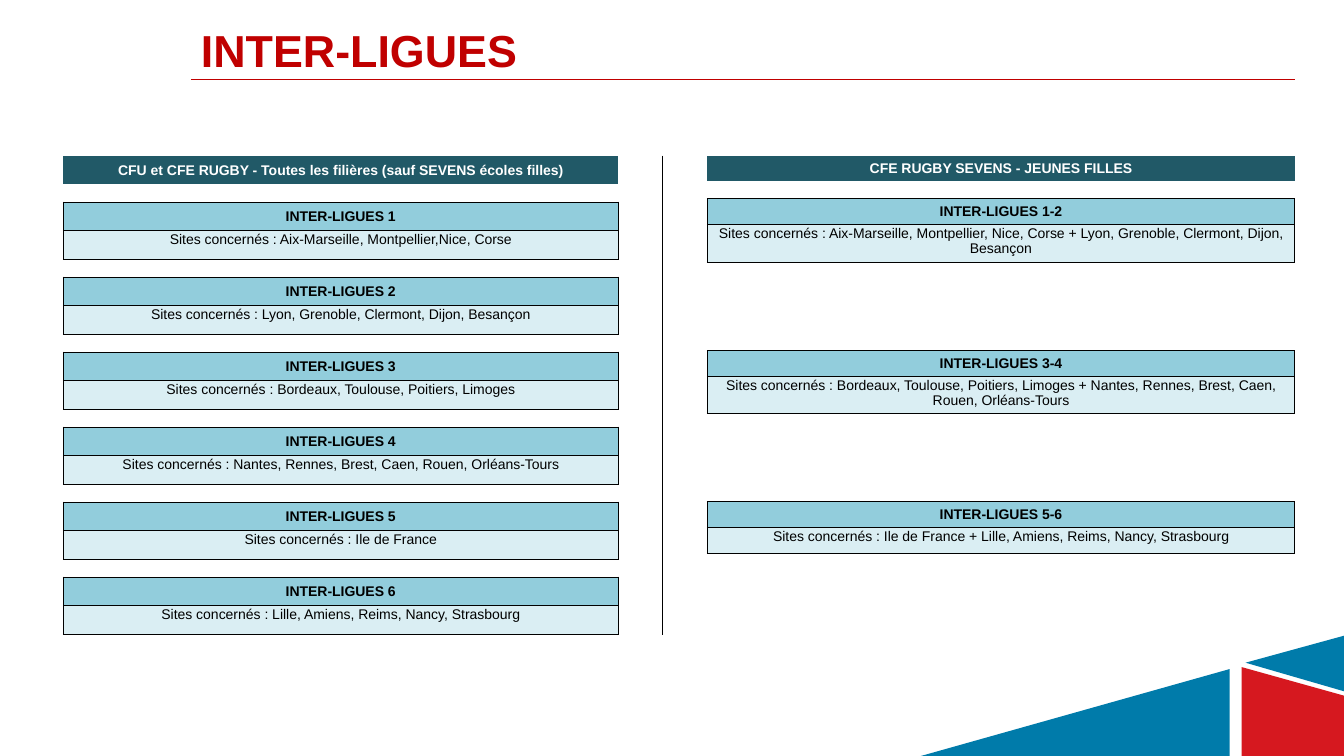
from lxml import etree
from pptx import Presentation
from pptx.dml.color import RGBColor
from pptx.enum.shapes import MSO_CONNECTOR
from pptx.enum.text import MSO_ANCHOR, MSO_AUTO_SIZE, PP_ALIGN
from pptx.oxml.ns import qn
from pptx.util import Cm, Pt

STRAIGHT = MSO_CONNECTOR.STRAIGHT
MIDDLE, TOP = MSO_ANCHOR.MIDDLE, MSO_ANCHOR.TOP
CENTER, LEFT = PP_ALIGN.CENTER, PP_ALIGN.LEFT
NO_FIT = MSO_AUTO_SIZE.NONE

FONT = "Arial"
PLAIN_STYLE = "{2D5ABB26-0587-4C30-8999-92F81FD0307C}"
COLS = 3
COLORS = {
    "title": "C00000", "black": "000000", "white": "FFFFFF",
    "dark": "215967", "mid": "92CDDC", "pale": "DAEEF3",
    "blue": "007BAA", "red": "D6181F",
}

ALL_SITES = [
    ("INTER-LIGUES 1", "Aix-Marseille, Montpellier,Nice, Corse", 0.72),
    ("INTER-LIGUES 2", "Lyon, Grenoble, Clermont, Dijon, Besançon", 0.72),
    ("INTER-LIGUES 3", "Bordeaux, Toulouse, Poitiers, Limoges", 0.72),
    ("INTER-LIGUES 4", "Nantes, Rennes, Brest, Caen, Rouen, Orléans-Tours", 0.72),
    ("INTER-LIGUES 5", "Ile de France", 0.72),
    ("INTER-LIGUES 6", "Lille, Amiens, Reims, Nancy, Strasbourg", 0.72),
]
GIRL_SITES = [
    ("INTER-LIGUES 1-2", "Aix-Marseille, Montpellier, Nice, Corse + Lyon, "
     "Grenoble, Clermont, Dijon, Besançon", 0.96),
    ("INTER-LIGUES 3-4", "Bordeaux, Toulouse, Poitiers, Limoges + Nantes, "
     "Rennes, Brest, Caen, Rouen, Orléans-Tours", 0.94),
    ("INTER-LIGUES 5-6", "Ile de France + Lille, Amiens, Reims, Nancy, "
     "Strasbourg", 0.66),
]


def rgb(name):
    return RGBColor.from_string(COLORS[name])


def add_run(para, text, size, color, bold):
    run = para.add_run()
    run.text = text
    font = run.font
    font.name, font.size, font.bold = FONT, Pt(size), bold
    font.color.rgb = rgb(color)


def add_line(slide, ends, color):
    line = slide.shapes.add_connector(STRAIGHT, *(Cm(v) for v in ends))
    line.line.color.rgb = rgb(color)
    line.line.width = Pt(0.5)
    etree.SubElement(line._element.spPr, qn("a:effectLst"))


def add_title(slide, box, text):
    left, top, width, height = box
    title = slide.shapes.title
    title.left, title.top = Cm(left), Cm(top)
    title.width, title.height = Cm(width), Cm(height)
    frame = title.text_frame
    frame.auto_size, frame.vertical_anchor = NO_FIT, MIDDLE
    para = frame.paragraphs[0]
    para.alignment, para.line_spacing = LEFT, 0.9
    add_run(para, text, 32, "title", True)
    rule = top + 1.61
    add_line(slide, (left, rule, left + width, rule), "title")


def add_corner(slide, box):
    """Place the three coloured panels of the bottom right corner."""
    left, top, width, height = box
    panels = [
        ("blue", [(0, height), (7.78, 0.84), (7.78, height)]),
        ("blue", [(width, 0), (8.18, 0.68), (width, 1.4)]),
        ("red", [(8.08, height), (width, height), (width, 1.51), (8.08, 0.79)]),
    ]
    for color, points in panels:
        start, *rest = [(Cm(left + x), Cm(top + y)) for x, y in points]
        path = slide.shapes.build_freeform(*start)
        path.add_line_segments(rest, close=True)
        panel = path.convert_to_shape()
        panel.shadow.inherit = False
        panel.fill.solid()
        panel.fill.fore_color.rgb = rgb(color)
        panel.line.fill.background()


def add_edges(cell, sides):
    props = cell._tc.get_or_add_tcPr()
    for side in sides:
        edge = etree.SubElement(props, qn("a:ln" + side), w=str(Pt(0.5)))
        fill = etree.SubElement(edge, qn("a:solidFill"))
        etree.SubElement(fill, qn("a:srgbClr"), val=COLORS["black"])


def fill_row(table, index, text, fill, color="black", bold=True,
             anchor=MIDDLE, sides=""):
    """Merge one row, then write, border and fill it."""
    first, last = table.cell(index, 0), table.cell(index, COLS - 1)
    first.merge(last)
    add_edges(first, sides)
    if "R" in sides:
        add_edges(last, "R")
    first.fill.solid()
    first.fill.fore_color.rgb = rgb(fill)
    first.vertical_anchor = anchor
    para = first.text_frame.paragraphs[0]
    para.alignment = CENTER
    add_run(para, text, 10, color, bold)


def add_sites(slide, box, heading, groups, head, lead, gap):
    """Draw a heading and its groups; head, lead and gap are row heights."""
    left, top, width = box
    heights = [head]
    for number, (_, _, note) in enumerate(groups):
        heights += [gap if number else lead, head, note]
    frame = slide.shapes.add_table(len(heights), COLS, Cm(left), Cm(top),
                                   Cm(width), Cm(sum(heights)))
    table = frame.table
    table.first_row = table.horz_banding = False
    table._tbl.tblPr.find(qn("a:tableStyleId")).text = PLAIN_STYLE
    for row, height in zip(table.rows, heights):
        row.height = Cm(height)
    for cell in table.iter_cells():
        cell.margin_left = cell.margin_top = cell.margin_right = Cm(0.03)
        cell.margin_bottom = 0
        para = cell.text_frame.paragraphs[0]
        etree.SubElement(para._p, qn("a:endParaRPr"), sz="800")

    fill_row(table, 0, heading, "dark", color="white")
    for number, (name, sites, _) in enumerate(groups):
        index = 3 * number + 2
        fill_row(table, index, name, "mid", sides="LRT")
        fill_row(table, index + 1, "Sites concernés : " + sites, "pale",
                 bold=False, anchor=TOP, sides="LRB")


def main():
    deck = Presentation()
    deck.slide_width, deck.slide_height = Cm(33.87), Cm(19.05)
    slide = deck.slides.add_slide(deck.slide_layouts.get_by_name("Title Only"))
    add_corner(slide, (23.21, 16.02, 10.66, 3.03))
    add_title(slide, (4.81, 0.39, 27.82, 1.88), "INTER-LIGUES")
    top = 3.92
    add_sites(slide, (1.59, top, 13.99),
              "CFU et CFE RUGBY - Toutes les filières (sauf SEVENS écoles filles)",
              ALL_SITES, head=0.72, lead=0.45, gap=0.45)
    add_sites(slide, (17.82, top, 14.81), "CFE RUGBY SEVENS - JEUNES FILLES",
              GIRL_SITES, head=0.65, lead=0.43, gap=2.22)
    add_line(slide, (16.69, top, 16.69, 16), "black")
    deck.save("out.pptx")


if __name__ == "__main__":
    main()
